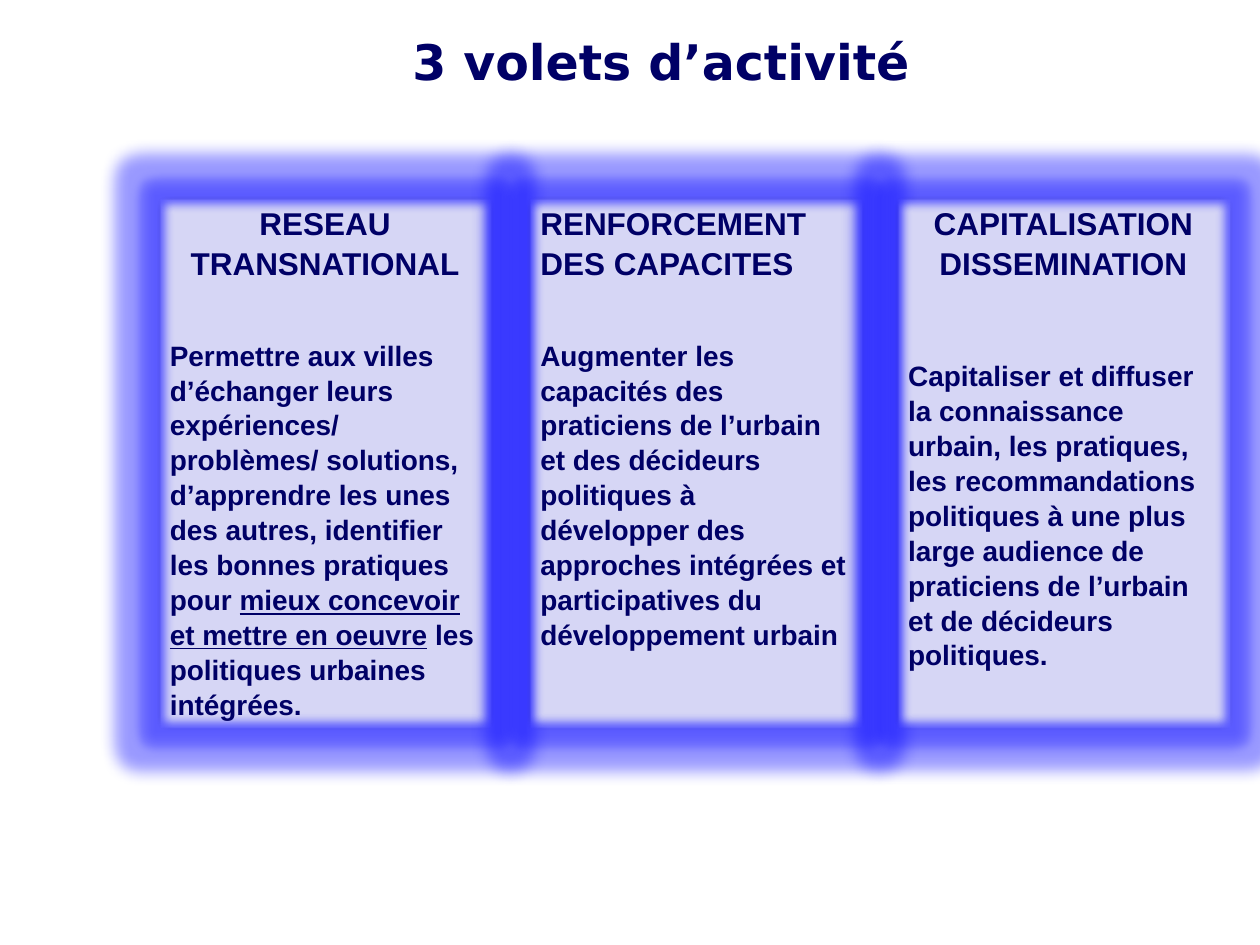
from dataclasses import dataclass

from lxml import etree
from pptx import Presentation
from pptx.dml.color import RGBColor
from pptx.enum import shapes, text
from pptx.oxml.ns import qn
from pptx.util import Pt


@dataclass(frozen=True)
class Theme:
    ink: RGBColor = RGBColor(0x00, 0x00, 0x66)
    panel: RGBColor = RGBColor(0xD6, 0xD6, 0xF5)
    border: RGBColor = RGBColor(0x1E, 0x1E, 0x87)
    glow: str = "0000FF"
    title_font: str = "DejaVu Sans"
    body_font: str = "Arial"
    title_size: int = 28
    heading_size: int = 18
    body_size: int = 16
    line_spacing: float = 1.04


THEME = Theme()
LEFT, CENTER = text.PP_ALIGN.LEFT, text.PP_ALIGN.CENTER

COLUMNS = [
    (90, CENTER, ["RESEAU TRANSNATIONAL"], 31.7, [
        ("Permettre aux villes d’échanger leurs expériences/ problèmes/ solutions, "
         "d’apprendre les unes des autres, identifier les bonnes pratiques pour ", False),
        ("mieux concevoir et mettre en oeuvre", True),
        (" les politiques urbaines intégrées.", False)]),
    (301.7, LEFT, ["RENFORCEMENT DES CAPACITES"], 31.7, [
        ("Augmenter les capacités des praticiens de l’urbain et des décideurs politiques "
         "à développer des approches intégrées et participatives du développement urbain",
         False)]),
    (511.9, CENTER, ["CAPITALISATION", "DISSEMINATION"], 43.4, [
        ("Capitaliser et diffuser la connaissance urbain, les pratiques, les "
         "recommandations politiques à une plus large audience de praticiens de l’urbain "
         "et de décideurs politiques.", False)]),
]


def write(p, runs, font, size, align, before=0):
    p.alignment = align
    p.line_spacing = THEME.line_spacing
    p.space_before = Pt(before)
    for words, underlined in runs:
        r = p.add_run()
        r.text = words
        r.font.name = font
        r.font.size = Pt(size)
        r.font.bold = True
        r.font.underline = underlined
        r.font.color.rgb = THEME.ink


def add_glow(sp, radius, soft_edge):
    effects = sp._element.spPr.find(qn("a:effectLst"))
    glow = etree.SubElement(effects, qn("a:glow"), rad=str(Pt(radius)))
    color = etree.SubElement(glow, qn("a:srgbClr"), val=THEME.glow)
    etree.SubElement(color, qn("a:alpha"), val="40000")
    etree.SubElement(effects, qn("a:softEdge"), rad=str(Pt(soft_edge)))


def add_title(s, x, y, w, h):
    tf = s.shapes.add_textbox(Pt(x), Pt(y), Pt(w), Pt(h)).text_frame
    tf.word_wrap = True
    tf.margin_left = tf.margin_top = tf.margin_right = tf.margin_bottom = 0
    write(tf.paragraphs[0], [("3 volets d’activité", False)],
          THEME.title_font, THEME.title_size, CENTER)


def add_column(s, x, y, w, h, align, headings, gap, body):
    sp = s.shapes.add_shape(shapes.MSO_SHAPE.RECTANGLE, Pt(x), Pt(y), Pt(w), Pt(h))
    sp.shadow.inherit = False
    sp.fill.solid()
    sp.fill.fore_color.rgb = THEME.panel
    sp.line.color.rgb = THEME.border
    sp.line.width = Pt(2)
    add_glow(sp, 18, 5)
    tf = sp.text_frame
    tf.word_wrap = True
    tf.vertical_anchor = text.MSO_ANCHOR.TOP
    for i, heading in enumerate(headings):
        p = tf.add_paragraph() if i else tf.paragraphs[0]
        write(p, [(heading, False)], THEME.body_font, THEME.heading_size, align)
    write(tf.add_paragraph(), body, THEME.body_font, THEME.body_size, LEFT, gap)


def main():
    prs = Presentation()
    prs.slide_width, prs.slide_height = Pt(720), Pt(540)
    s = prs.slides.add_slide(prs.slide_layouts[6])
    add_title(s, 90, 16.6, 575.3, 46.8)
    for x, *content in COLUMNS:
        add_column(s, x, 112.3, 191.5, 303.8, *content)
    prs.save("out.pptx")


if __name__ == "__main__":
    main()
